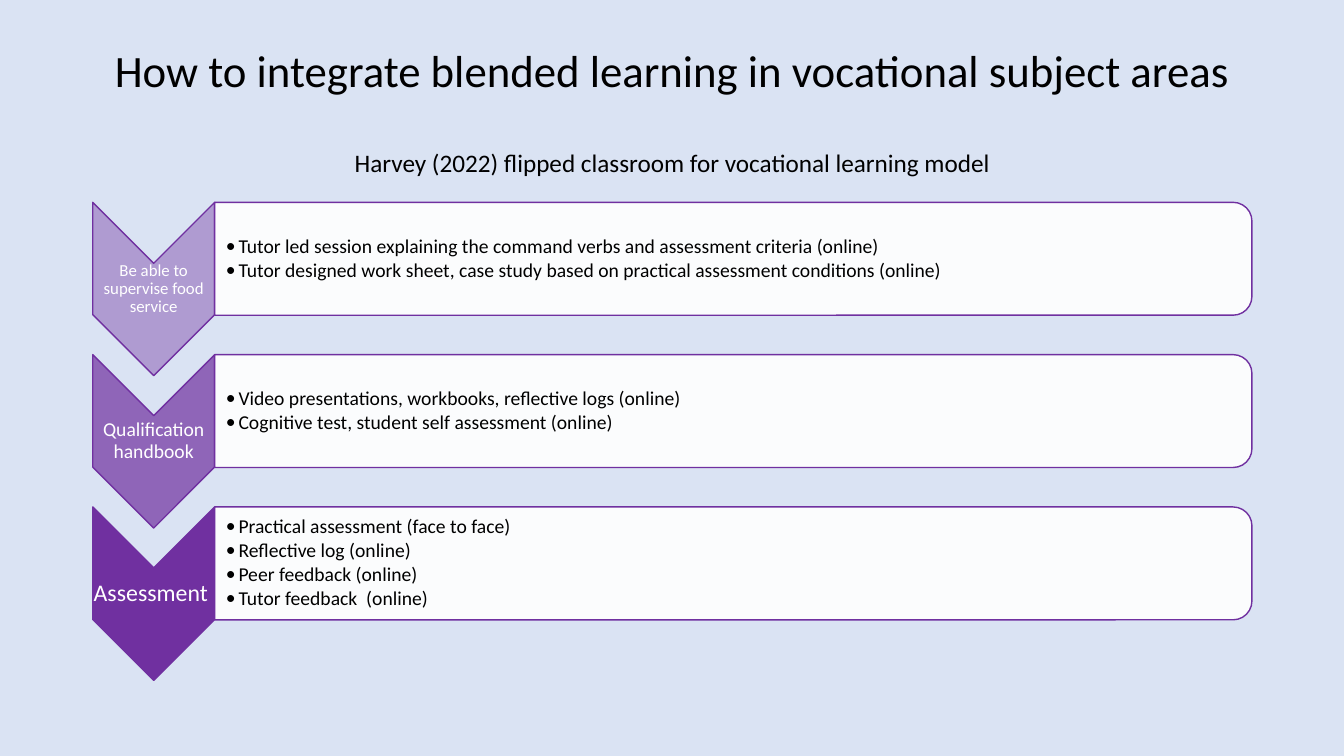
from lxml import etree
from pptx import Presentation
from pptx.dml.color import RGBColor
from pptx.enum import shapes, text
from pptx.oxml import ns
from pptx.util import Pt

HUES = {"back": "DAE3F3", "main": "7030A0", "pane": "FFFFFF",
        "dark": "000000", "light": "FFFFFF"}
LEFT, TOP, STEP = 66.24, 144.5, 108.8
CHEV_W, CHEV_H = 87.12, 123.84
PANE_W, PANE_H = 740.88, 80.64
STAGES = [
    ("Be able to supervise food service", 12, "CENTER", 40, [
        "Tutor led session explaining the command verbs and assessment criteria (online)",
        "Tutor designed work sheet, case study based on practical assessment conditions (online)"]),
    ("Qualification handbook", 14, "CENTER", 70, [
        "Video presentations, workbooks, reflective logs (online)",
        "Cognitive test, student self assessment (online)"]),
    ("Assessment", 17, "LEFT", 100, [
        "Practical assessment (face to face)",
        "Reflective log (online)",
        "Peer feedback (online)",
        "Tutor feedback  (online)"]),
]


def color(name):
    """Return the named colour."""
    return RGBColor.from_string(HUES[name])


def add_text(frame, words, size=14, hue="dark", align="LEFT", before=0, after=0, bullet=False):
    """Write one formatted paragraph into a text frame."""
    para = frame.paragraphs[0]
    if para.runs:
        para = frame.add_paragraph()
    para.alignment = getattr(text.PP_ALIGN, align)
    para.line_spacing = 0.9
    para.space_before, para.space_after = Pt(before), Pt(after)
    if bullet:
        para.level = 1
        props = para._p.get_or_add_pPr()
        props.set("marL", str(Pt(9)))
        props.set("indent", str(-Pt(9)))
        etree.SubElement(props, ns.qn("a:buFont")).set("typeface", "Calibri")
        etree.SubElement(props, ns.qn("a:buChar")).set("char", "•")
    run = para.add_run()
    run.text = words
    run.font.name, run.font.size = "Calibri", Pt(size)
    run.font.color.rgb = color(hue)


def add_box(slide, left, top, width, height, inset=(0.7, 0.7)):
    """Add a wrapped text box centred in height and return its frame."""
    frame = slide.shapes.add_textbox(Pt(left), Pt(top), Pt(width), Pt(height)).text_frame
    frame.word_wrap = True
    frame.vertical_anchor = text.MSO_ANCHOR.MIDDLE
    frame.margin_left, frame.margin_right = map(Pt, inset)
    frame.margin_top = frame.margin_bottom = Pt(0.7)
    return frame


def add_turned(slide, kind, left, top, width, height, hue, alpha):
    """Add a shape turned by 90 degrees that fills the given area."""
    shape = slide.shapes.add_shape(
        kind, Pt(left + (width - height) / 2), Pt(top + (height - width) / 2),
        Pt(height), Pt(width))
    shape.rotation = 90
    shape.shadow.inherit = False
    shape.fill.solid()
    shape.fill.fore_color.rgb = color(hue)
    if alpha < 100:
        tint = shape._element.spPr.find(ns.qn("a:solidFill"))[0]
        etree.SubElement(tint, ns.qn("a:alpha")).set("val", str(alpha * 1000))
    shape.line.color.rgb = color("main")
    shape.line.width = Pt(1)


def add_stage(slide, top, label, size, align, alpha, points):
    """Add a chevron with its label and the panel of points beside it."""
    kinds = shapes.MSO_SHAPE
    right = LEFT + CHEV_W
    add_turned(slide, kinds.CHEVRON, LEFT, top, CHEV_W, CHEV_H, "main", alpha)
    frame = add_box(slide, LEFT, top + 43, CHEV_W, 37.5)
    add_text(frame, label, size=size, hue="light", align=align)
    add_turned(slide, kinds.ROUND_2_SAME_RECTANGLE, right, top, PANE_W, PANE_H, "pane", 90)
    frame = add_box(slide, right, top + 4, PANE_W - 4, PANE_H - 8, inset=(8, 0.7))
    for point in points:
        add_text(frame, point, after=2, bullet=True)


def main():
    """Build and save the slide."""
    deck = Presentation()
    deck.slide_width, deck.slide_height = Pt(960), Pt(540)
    slide = deck.slides.add_slide(deck.slide_layouts[6])
    slide.background.fill.solid()
    slide.background.fill.fore_color.rgb = color("back")
    head = add_box(slide, LEFT, 28.8, 828, 104.4, inset=(7.2, 7.2))
    add_text(head, "How to integrate blended learning in vocational subject areas",
             size=32, align="CENTER")
    add_text(head, "Harvey (2022) flipped classroom for vocational learning model",
             size=18, align="CENTER", before=38)
    for row, stage in enumerate(STAGES):
        add_stage(slide, TOP + row * STEP, *stage)
    deck.save("out.pptx")


if __name__ == "__main__":
    main()
